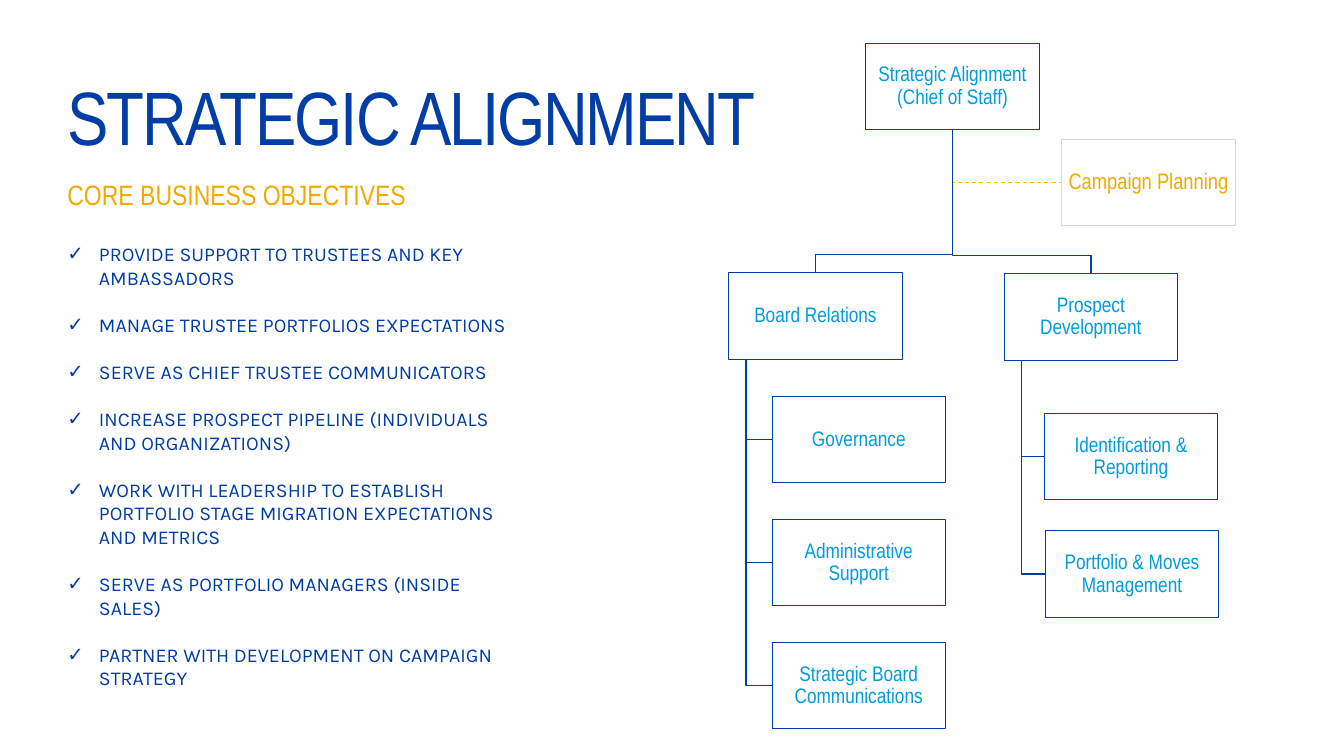
from lxml.etree import SubElement
from pptx import Presentation
from pptx.dml.color import RGBColor
from pptx.enum.dml import MSO_LINE_DASH_STYLE as DASH
from pptx.enum.shapes import MSO_SHAPE as SHAPE
from pptx.enum.text import MSO_ANCHOR as ANCHOR, MSO_AUTO_SIZE as AUTO_SIZE, PP_ALIGN as ALIGN
from pptx.oxml.ns import qn
from pptx.util import Pt

NAVY = RGBColor(0x00, 0x3D, 0xA5)
SKY = RGBColor(0x00, 0x9C, 0xDE)
GOLD = RGBColor(0xF1, 0xAB, 0x00)
LIGHT_GREY = RGBColor(0xD9, 0xD9, 0xD9)
AMBER = RGBColor(0xFF, 0xC0, 0x00)

BOX_W, BOX_H = 123.84, 61.92


def write(frame, items, size, color, font="Arial Narrow", align=ALIGN.LEFT, anchor=ANCHOR.TOP,
          inset=0, leading=1.0, gap=0, tracking=None, bullet=None):
    frame.word_wrap = True
    frame.auto_size = AUTO_SIZE.NONE
    frame.vertical_anchor = anchor
    frame.margin_left = frame.margin_right = Pt(inset)
    frame.margin_top = frame.margin_bottom = Pt(inset)
    for i, item in enumerate(items):
        para = frame.add_paragraph() if i else frame.paragraphs[0]
        para.alignment = align
        para.line_spacing = leading
        para.space_before = Pt(gap if i else 0)
        para.space_after = Pt(0)
        if bullet:
            props = para._p.get_or_add_pPr()
            props.set("marL", str(Pt(22.5)))
            props.set("indent", str(-Pt(22.5)))
            SubElement(props, qn("a:buChar")).set("char", bullet)
        run = para.add_run()
        run.text = item
        run.font.name, run.font.size = font, Pt(size)
        run.font.color.rgb = color
        if tracking is not None:
            run._r.get_or_add_rPr().set("spc", str(tracking))


def draw_path(points, color=NAVY, width=1, dash=None):
    start, *rest = [(Pt(x), Pt(y)) for x, y in points]
    builder = slide.shapes.build_freeform(*start)
    builder.add_line_segments(rest, close=False)
    path = builder.convert_to_shape()
    path.shadow.inherit = False
    path.fill.background()
    path.line.color.rgb = color
    path.line.width = Pt(width)
    if dash:
        path.line.dash_style = dash


prs = Presentation()
prs.slide_width, prs.slide_height = Pt(960), Pt(540)
slide = prs.slides.add_slide(prs.slide_layouts[1])

# Headings
title = slide.shapes.title
title.left, title.top, title.width, title.height = Pt(48.2), Pt(49.7), Pt(560), Pt(65.5)
write(title.text_frame, ["STRATEGIC ALIGNMENT"], 54, NAVY, tracking=-150)

subtitle = slide.shapes.add_textbox(Pt(48.2), Pt(126.7), Pt(460), Pt(24.5))
write(subtitle.text_frame, ["CORE BUSINESS OBJECTIVES"], 20, GOLD)

# Objectives list
objectives = slide.placeholders[1]
objectives.left, objectives.top = Pt(48.2), Pt(172.8)
objectives.width, objectives.height = Pt(327), Pt(326)
write(objectives.text_frame, [
    "PROVIDE SUPPORT TO TRUSTEES AND KEY AMBASSADORS",
    "MANAGE TRUSTEE PORTFOLIOS EXPECTATIONS",
    "SERVE AS CHIEF TRUSTEE COMMUNICATORS",
    "INCREASE PROSPECT PIPELINE (INDIVIDUALS AND ORGANIZATIONS)",
    "WORK WITH LEADERSHIP TO ESTABLISH PORTFOLIO STAGE MIGRATION EXPECTATIONS AND METRICS",
    "SERVE AS PORTFOLIO MANAGERS (INSIDE SALES)",
    "PARTNER WITH DEVELOPMENT ON CAMPAIGN STRATEGY",
], 14, NAVY, font="Karla", gap=16.9, bullet="✓")

# Organisation chart: each entry is label, left, top
chief = ("Strategic Alignment (Chief of Staff)", 618.5, 30.8)
campaign = ("Campaign Planning", 758.4, 99.4)
branches = [
    (("Board Relations", 520.6, 194.9), [
        ("Governance", 551.5, 283),
        ("Administrative Support", 551.5, 370.9),
        ("Strategic Board Communications", 551.5, 458.8),
    ]),
    (("Prospect Development", 717.3, 195.4), [
        ("Identification & Reporting", 745.9, 295.2),
        ("Portfolio & Moves Management", 746.7, 379),
    ]),
]

# Connecting lines
trunk_x, trunk_top, bus_drop = chief[1] + BOX_W / 2, chief[2] + BOX_H, 13
campaign_y = campaign[2] + BOX_H / 2
draw_path([(trunk_x, trunk_top), (trunk_x, campaign_y), (campaign[1], campaign_y)],
          AMBER, 0.75, DASH.DASH)
for (_, left, top), teams in branches:
    head_x, stem_x, bus_y = left + BOX_W / 2, left + BOX_W / 10, top - bus_drop
    draw_path([(trunk_x, trunk_top), (trunk_x, bus_y), (head_x, bus_y), (head_x, top)])
    for _, team_left, team_top in teams:
        team_y = team_top + BOX_H / 2
        draw_path([(stem_x, top + BOX_H), (stem_x, team_y), (team_left, team_y)])

# Boxes
boxes = [(chief, NAVY, SKY, 15)]
for head, teams in branches:
    boxes += [(unit, NAVY, SKY, 15) for unit in [head, *teams]]
boxes.append((campaign, LIGHT_GREY, GOLD, 16))
for (label, left, top), border, color, size in boxes:
    box = slide.shapes.add_shape(SHAPE.RECTANGLE, Pt(left), Pt(top), Pt(BOX_W), Pt(BOX_H))
    box.shadow.inherit = False
    box.fill.background()
    box.line.color.rgb = border
    box.line.width = Pt(0.75)
    write(box.text_frame, [label], size, color, align=ALIGN.CENTER, anchor=ANCHOR.MIDDLE,
          inset=0.75, leading=0.9)

prs.save("out.pptx")
